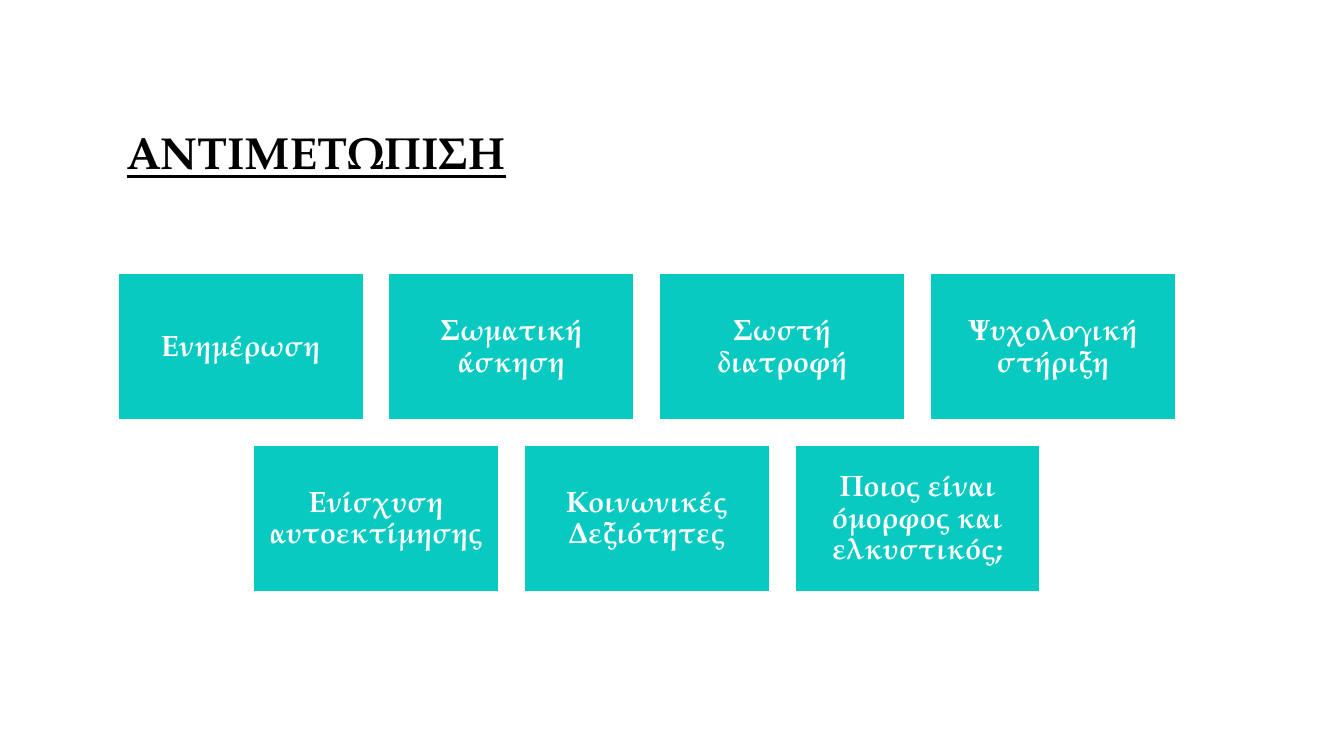
from pptx import Presentation
from pptx.dml.color import RGBColor
from pptx.enum.shapes import MSO_SHAPE as Shape
from pptx.enum.text import MSO_ANCHOR as Anchor, PP_ALIGN as Align
from pptx.util import Inches, Pt

TITLE = "ΑΝΤΙΜΕΤΩΠΙΣΗ"
ROWS = [
    ["Ενημέρωση", "Σωματική άσκηση", "Σωστή διατροφή", "Ψυχολογική στήριξη"],
    ["Ενίσχυση αυτοεκτίμησης", "Κοινωνικές Δεξιότητες",
     "Ποιος είναι όμορφος και ελκυστικός;"],
]

FONT = "TeX Gyre Pagella"
TEAL = RGBColor(0x08, 0xCA, 0xC1)
WHITE = RGBColor(0xFF, 0xFF, 0xFF)
BLACK = RGBColor(0, 0, 0)

CARD_W, CARD_H, GAP = 2.44, 1.46, 0.245
GRID_CENTER, GRID_TOP = 6.415, 2.71
INSET = Inches(0.09)


def write(tf, text, size, color, align, underline=None):
    p = tf.paragraphs[0]
    p.alignment = align
    p.line_spacing = 0.9
    r = p.add_run()
    r.text = text
    r.font.name = FONT
    r.font.size = Pt(size)
    r.font.bold = True
    r.font.underline = underline
    r.font.color.rgb = color


def add_card(s, text, left, top):
    sp = s.shapes.add_shape(Shape.RECTANGLE, Inches(left), Inches(top),
                            Inches(CARD_W), Inches(CARD_H))
    sp.shadow.inherit = False
    sp.fill.solid()
    sp.fill.fore_color.rgb = TEAL
    sp.line.color.rgb = WHITE
    sp.line.width = Pt(1.5)
    tf = sp.text_frame
    tf.word_wrap = True
    tf.vertical_anchor = Anchor.MIDDLE
    tf.margin_left = tf.margin_right = tf.margin_top = tf.margin_bottom = INSET
    write(tf, text, 21, WHITE, Align.CENTER)


prs = Presentation()
prs.slide_width, prs.slide_height = Inches(13.33), Inches(7.5)
s = prs.slides.add_slide(prs.slide_layouts[5])

title = s.shapes.title
title.left, title.top = Inches(1.16), Inches(0.58)
title.width, title.height = Inches(10.5), Inches(1.25)
title.text_frame.vertical_anchor = Anchor.BOTTOM
write(title.text_frame, TITLE, 32, BLACK, Align.LEFT, True)

for row, labels in enumerate(ROWS):
    row_width = len(labels) * (CARD_W + GAP) - GAP
    for col, label in enumerate(labels):
        left = GRID_CENTER - row_width / 2 + col * (CARD_W + GAP)
        add_card(s, label, left, GRID_TOP + row * (CARD_H + GAP))

prs.save("out.pptx")
